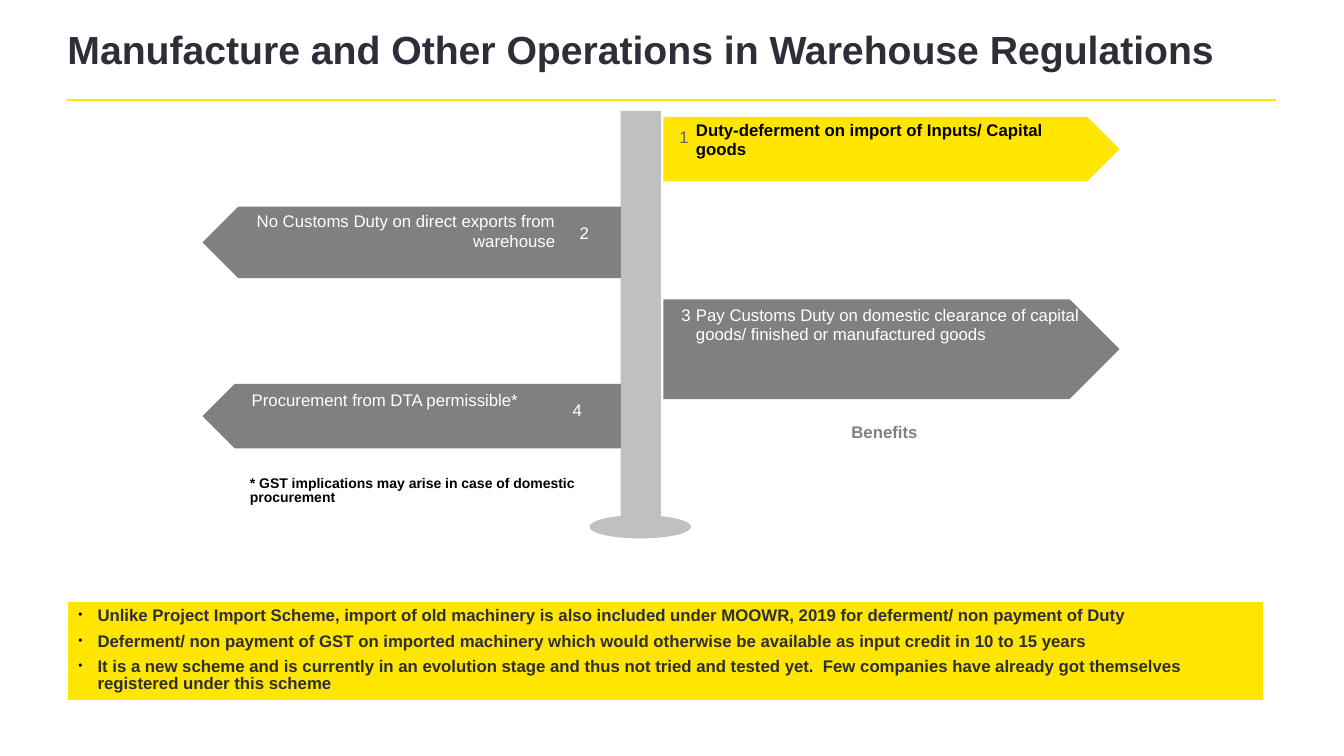
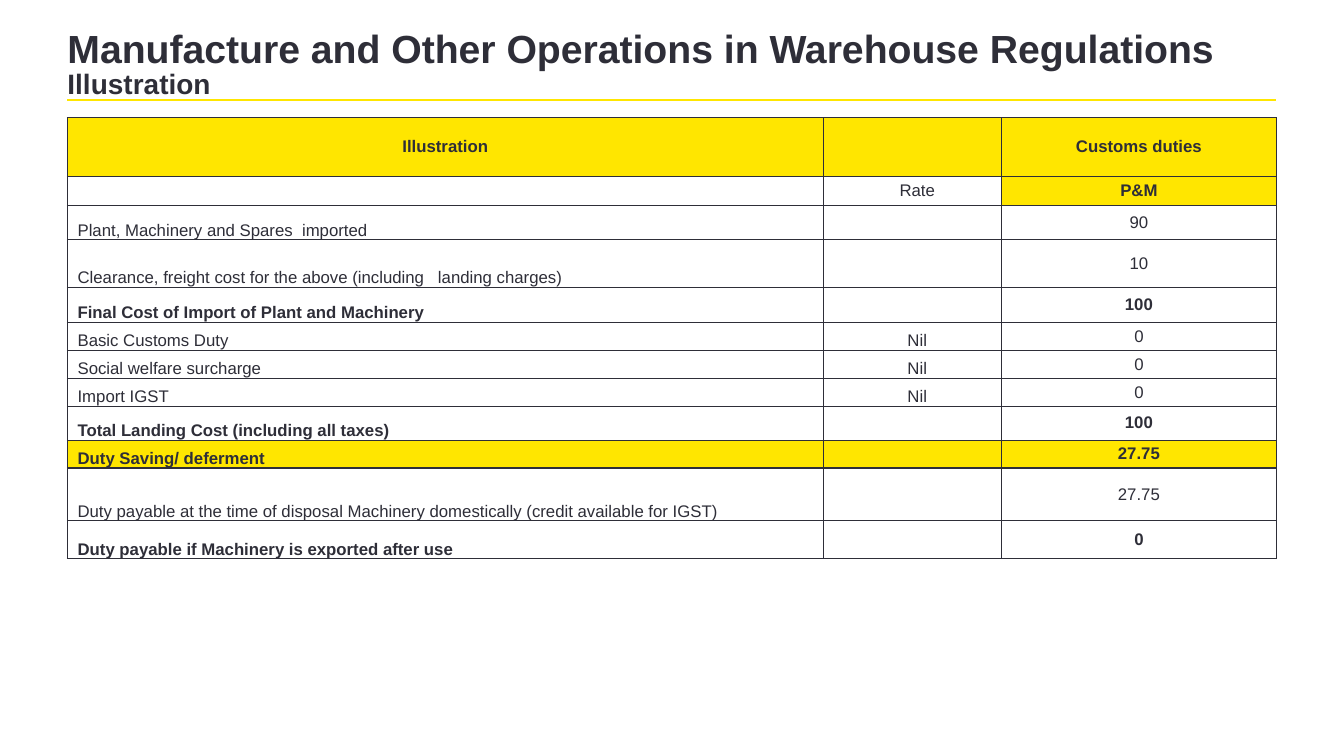
from lxml import etree
from pptx import Presentation
from pptx.dml.color import RGBColor
from pptx.enum import shapes, text
from pptx.oxml import ns
from pptx.util import Pt

COLORS = {
    "ink": "2E2E38",
    "yellow": "FFE600",
    "grey": "808080",
    "post": "C0C0C0",
    "number": "646464",
    "black": "000000",
    "white": "FFFFFF",
}
FONT = "Arial"
LEFT, RULE_TOP, CONTENT_WIDTH = 48.24, 71.3, 864
TITLE = "Manufacture and Other Operations in Warehouse Regulations"
LEFT_ALIGN, CENTER, RIGHT = text.PP_ALIGN.LEFT, text.PP_ALIGN.CENTER, text.PP_ALIGN.RIGHT
MIDDLE, BOTTOM, TOP = text.MSO_ANCHOR.MIDDLE, text.MSO_ANCHOR.BOTTOM, text.MSO_ANCHOR.TOP

SIGNS = [
    ("1", (474, 83.5, 326, 46), (481.7, 90), "yellow", "number",
     "Duty-deferment on import of Inputs/ Capital goods",
     (490.3, 82.8, 284.4, 34.6), dict(color="black", bold=True)),
    ("2", (144.7, 147.6, 299, 51.1), (410.4, 158.4), "grey", "white",
     "No Customs Duty on direct exports from warehouse",
     (157.7, 148.3, 246.2, 34.6), dict(color="white", align=RIGHT)),
    ("3", (474, 213.8, 326, 71.3), (483.1, 216.7), "grey", "white",
     "Pay Customs Duty on domestic clearance of capital goods/ finished or manufactured goods",
     (490.3, 215.3, 301, 34.6), dict(color="white")),
    ("4", (144.7, 274.3, 299, 46), (405.4, 285.1), "grey", "white",
     "Procurement from DTA permissible*",
     (172.8, 275.8, 231.1, 20.9), dict(color="white")),
]

NOTES = [
    "Unlike Project Import Scheme, import of old machinery is also included under MOOWR, 2019 "
    "for deferment/ non payment of Duty",
    "Deferment/ non payment of GST on imported machinery which would otherwise be available "
    "as input credit in 10 to 15 years",
    "It is a new scheme and is currently in an evolution stage and thus not tried and tested yet.  "
    "Few companies have already got themselves registered under this scheme",
]

COLUMN_WIDTHS = [540, 127.4, 196.6]
ALL_COLUMNS = (0, 1, 2)
COST_ROWS = [
    (41.7, ("Illustration", "", "Customs duties"), True, ALL_COLUMNS),
    (21, ("", "Rate", "P&M"), False, (2,)),
    (24.5, ("Plant, Machinery and Spares  imported", "", "90"), False, ()),
    (33.8, ("Clearance, freight cost for the above (including   landing charges)", "", "10"), False, ()),
    (25, ("Final Cost of Import of Plant and Machinery", "", "100"), True, ()),
    (20, ("Basic Customs Duty", "Nil", "0"), False, ()),
    (20, ("Social welfare surcharge", "Nil", "0"), False, ()),
    (20, ("Import IGST", "Nil", "0"), False, ()),
    (24.3, ("Total Landing Cost (including all taxes)", "", "100"), True, ()),
    (20, ("Duty Saving/ deferment", "", "27.75"), True, ALL_COLUMNS),
    (37.7, ("Duty payable at the time of disposal Machinery domestically (credit available for IGST)",
            "", "27.75"), False, ()),
    (27, ("Duty payable if Machinery is exported after use", "", "0"), True, ()),
]


def rgb(name):
    return RGBColor.from_string(COLORS[name])


def add_element(parent, tag, **attributes):
    return etree.SubElement(parent, ns.qn(tag), attributes)


def write_paragraph(frame, content, size=12, color="ink", bold=False, align=LEFT_ALIGN,
                    line_spacing=None, space_after=0, indent=0, bullet=False):
    paragraph = frame.paragraphs[0] if not frame.text else frame.add_paragraph()
    paragraph.alignment = align
    paragraph.space_after = Pt(space_after)
    if line_spacing:
        paragraph.line_spacing = line_spacing
    properties = paragraph._p.get_or_add_pPr()
    properties.set("marL", str(Pt(indent)))
    properties.set("indent", str(Pt(-indent if bullet else 0)))
    if bullet:
        bullet_color = add_element(properties, "a:buClr")
        add_element(bullet_color, "a:srgbClr", val=COLORS["black"])
        add_element(properties, "a:buSzPct", val="70000")
        add_element(properties, "a:buFont", typeface=FONT)
        add_element(properties, "a:buChar", char="•")
    if not content:
        add_element(paragraph._p, "a:endParaRPr", sz=str(size * 100))
        return
    run = paragraph.add_run()
    run.text = content
    run.font.name = FONT
    run.font.size = Pt(size)
    run.font.bold = bold
    run.font.color.rgb = rgb(color)


def set_margins(target, left, top, right, bottom):
    target.margin_left, target.margin_top = Pt(left), Pt(top)
    target.margin_right, target.margin_bottom = Pt(right), Pt(bottom)


def add_frame(slide, box, margins=(7.2, 3.6, 7.2, 3.6)):
    frame = slide.shapes.add_textbox(*map(Pt, box)).text_frame
    frame.word_wrap = True
    frame.vertical_anchor = TOP
    set_margins(frame, *margins)
    return frame


def add_block(slide, kind, box, fill):
    shape = slide.shapes.add_shape(kind, *map(Pt, box))
    shape.shadow.inherit = False
    shape.fill.solid()
    shape.fill.fore_color.rgb = rgb(fill)
    shape.line.fill.background()
    return shape


def add_titled_slide(presentation, top, subtitle=None):
    slide = presentation.slides.add_slide(presentation.slide_layouts[6])
    rule = slide.shapes.add_connector(shapes.MSO_CONNECTOR.STRAIGHT, Pt(LEFT), Pt(RULE_TOP),
                                      Pt(LEFT + CONTENT_WIDTH), Pt(RULE_TOP))
    rule.line.color.rgb = rgb("yellow")
    rule.line.width = Pt(1.5)
    add_element(rule._element.spPr, "a:effectLst")
    frame = add_frame(slide, (LEFT, top, CONTENT_WIDTH, 46.8), margins=(0, 0, 0, 0))
    write_paragraph(frame, TITLE, size=28, bold=True, line_spacing=0.85)
    if subtitle:
        write_paragraph(frame, subtitle, size=20, bold=True, line_spacing=0.85)
    return slide


def add_sign(slide, number, plate_box, number_place, fill, number_color, label, label_box, style):
    plate = add_block(slide, shapes.MSO_SHAPE.PENTAGON, plate_box, fill)
    if plate_box[0] < 443:
        plate.rotation = 180
    frame = add_frame(slide, (*number_place, 14.4, 15.1), margins=(0, 2.9, 0, 0))
    write_paragraph(frame, number, color=number_color, align=CENTER, line_spacing=0.85)
    write_paragraph(add_frame(slide, label_box), label, line_spacing=0.95, **style)


def add_notes_panel(slide):
    panel = add_block(slide, shapes.MSO_SHAPE.RECTANGLE, (LEFT + 0.7, 430.6, 853.2, 69.1), "yellow")
    panel.line.color.rgb = rgb("yellow")
    panel.line.width = Pt(0.75)
    frame = panel.text_frame
    frame.word_wrap = True
    frame.vertical_anchor = TOP
    for note in NOTES:
        write_paragraph(frame, note, bold=True, line_spacing=0.85, space_after=6,
                        indent=13.7, bullet=True)


def set_borders(cell):
    properties = cell._tc.get_or_add_tcPr()
    for position, side in enumerate(("a:lnL", "a:lnR", "a:lnT", "a:lnB")):
        border = etree.Element(ns.qn(side), w=str(Pt(1)))
        fill = add_element(border, "a:solidFill")
        add_element(fill, "a:srgbClr", val=COLORS["ink"])
        properties.insert(position, border)


def add_cost_table(slide):
    height = sum(row[0] for row in COST_ROWS)
    table = slide.shapes.add_table(len(COST_ROWS), len(COLUMN_WIDTHS), Pt(LEFT), Pt(84.2),
                                   Pt(CONTENT_WIDTH), Pt(height)).table
    table.first_row = table.horz_banding = False
    for column, width in zip(table.columns, COLUMN_WIDTHS):
        column.width = Pt(width)
    for row_index, (row_height, values, bold, highlighted) in enumerate(COST_ROWS):
        table.rows[row_index].height = Pt(row_height)
        for column_index, value in enumerate(values):
            cell = table.cell(row_index, column_index)
            set_margins(cell, 0, 0, 0, 0)
            in_head = row_index < 2
            cell.vertical_anchor = MIDDLE if in_head or column_index == 2 else BOTTOM
            if column_index in highlighted:
                cell.fill.solid()
                cell.fill.fore_color.rgb = rgb("yellow")
            else:
                cell.fill.background()
            set_borders(cell)
            centered = row_index == 0 or column_index > 0
            indented = row_index > 0 and column_index < 2
            write_paragraph(cell.text_frame, value, bold=bold or column_index in highlighted,
                            align=CENTER if centered else LEFT_ALIGN, indent=7.2 if indented else 0)


def build_benefits_slide(presentation):
    slide = add_titled_slide(presentation, top=23)
    write_paragraph(add_frame(slide, (432.7, 297.4, 398.9, 21.6)), "Benefits",
                    color="grey", bold=True, align=CENTER)
    add_block(slide, shapes.MSO_SHAPE.OVAL, (421.2, 368, 72.7, 16.6), "post")
    add_block(slide, shapes.MSO_SHAPE.RECTANGLE, (443.5, 79.2, 28.8, 295.2), "post")
    for sign in SIGNS:
        add_sign(slide, *sign)
    add_notes_panel(slide)
    footnote = add_frame(slide, (178.6, 337.7, 282.2, 23.8), margins=(0, 2.9, 0, 0))
    write_paragraph(footnote, "* GST implications may arise in case of domestic procurement",
                    size=10, color="black", bold=True, line_spacing=0.85)


def build_illustration_slide(presentation):
    slide = add_titled_slide(presentation, top=22.3, subtitle="Illustration")
    add_cost_table(slide)


def main():
    presentation = Presentation()
    presentation.slide_width, presentation.slide_height = Pt(960.48), Pt(540)
    build_benefits_slide(presentation)
    build_illustration_slide(presentation)
    presentation.save("out.pptx")


if __name__ == "__main__":
    main()
